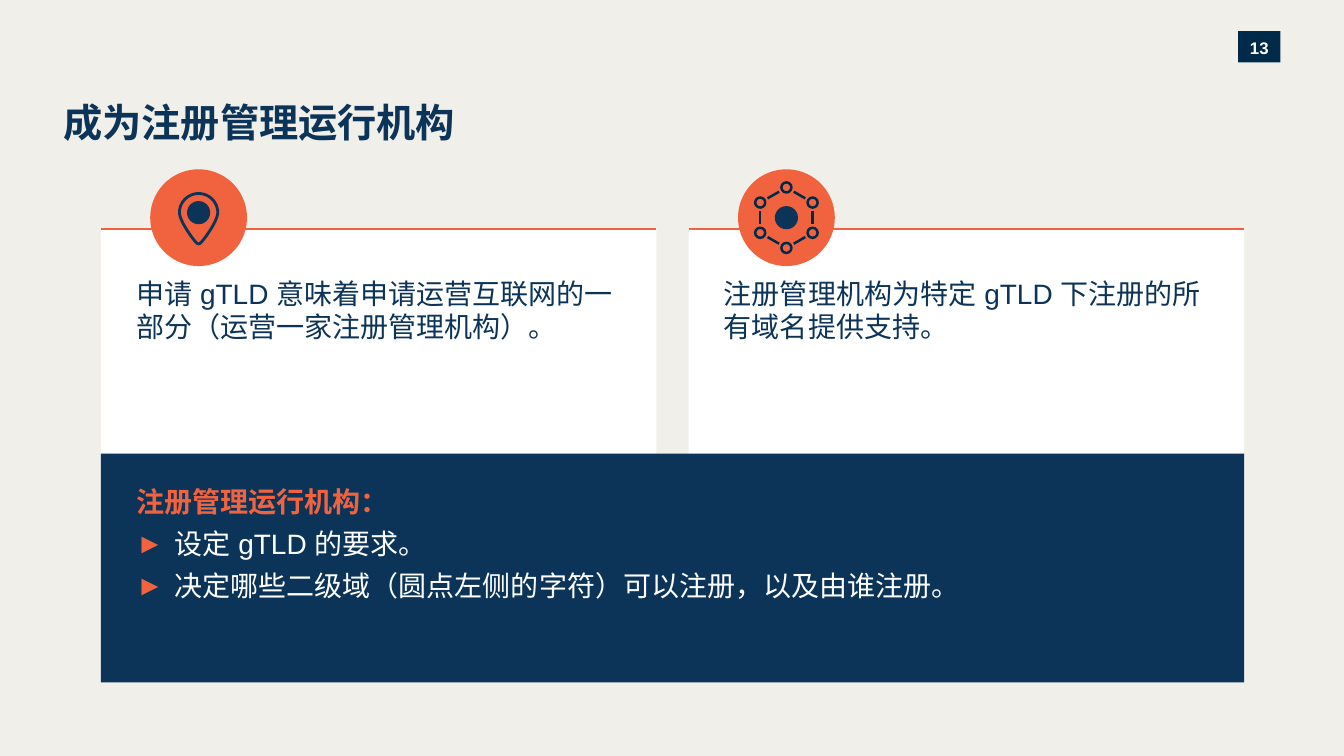
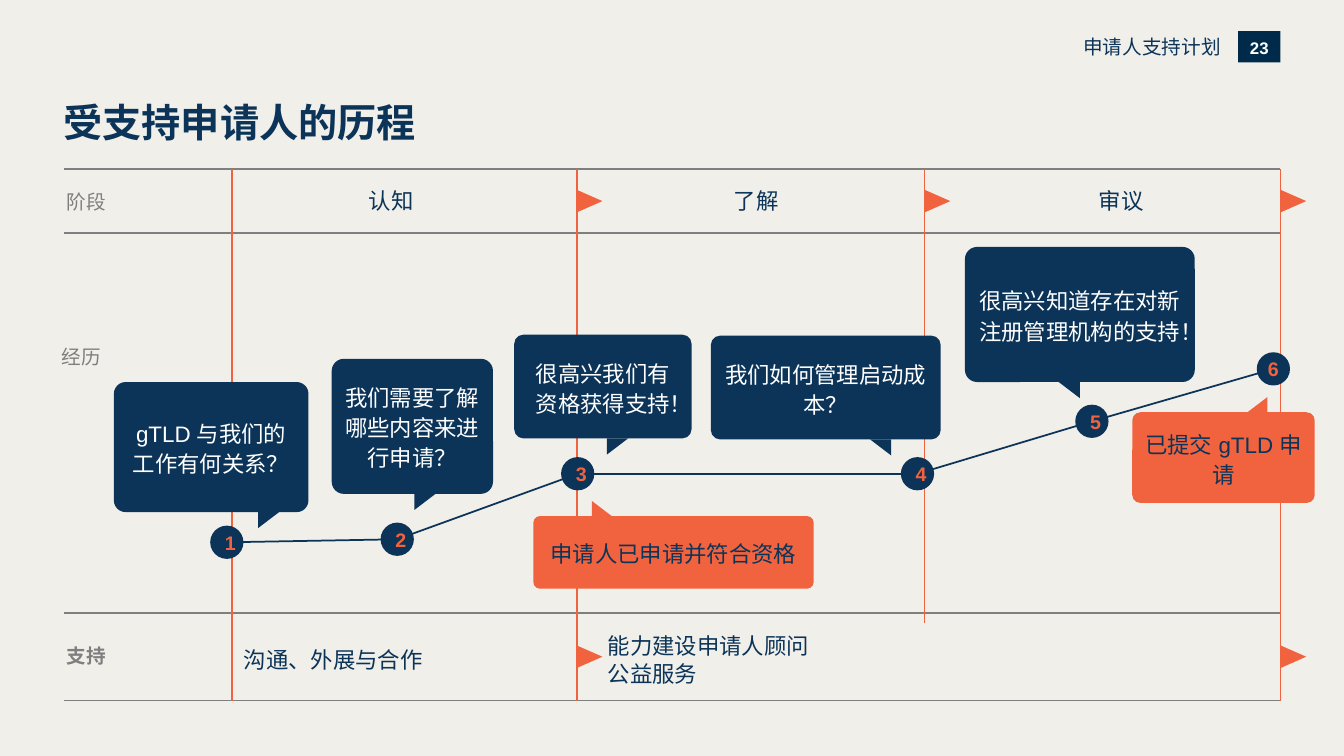
import math
from collections import namedtuple

from lxml import etree
from pptx import Presentation
from pptx import util as u
from pptx.dml.color import RGBColor
from pptx.enum import shapes, text
from pptx.oxml.ns import qn

NAVY, INK, ORANGE = "0B3458", "002A49", "F1633E"
PAPER, WHITE, GREY = "F1EFEA", "FFFFFF", "7F7F7F"
FONT = "Arial"
KIND = shapes.MSO_SHAPE
LEFT, CENTER, RIGHT = text.PP_ALIGN.LEFT, text.PP_ALIGN.CENTER, text.PP_ALIGN.RIGHT
TOP, MIDDLE = text.MSO_ANCHOR.TOP, text.MSO_ANCHOR.MIDDLE
NO_INSET = (0, 0, 0, 0)


class Box(namedtuple("Box", "x y w h")):
    """An area on a grid of one-inch columns and rows."""

    def inner(self, x, y, w, h):
        return Box(self.x + x, self.y + y, w, h)

    def inches(self):
        return [u.Inches(side) for side in self]


SLIDE = Box(0, 0, 13.33, 7.5)


# Shared drawing helpers
def color(value):
    return RGBColor.from_string(value)


def write(shape, words, size, ink, bold=False, align=LEFT, anchor=TOP,
          inset=NO_INSET, spacing=None):
    frame = shape.text_frame
    frame.word_wrap = True
    frame.vertical_anchor = anchor
    frame.margin_left, frame.margin_top, frame.margin_right, frame.margin_bottom = (
        u.Inches(side) for side in inset)
    frame.text = words
    for para in frame.paragraphs:
        para.alignment = align
        if spacing:
            para.line_spacing = spacing
        for span in para.runs:
            style(span, size, ink, bold)
    return frame


def style(span, size, ink, bold):
    font = span.font
    font.name, font.size, font.bold = FONT, u.Pt(size), bold
    font.color.rgb = color(ink)
    props = font._element
    props.set("lang", "zh-CN")
    etree.SubElement(props, qn("a:ea")).set("typeface", FONT)


def label(page, box, words, size, ink, **options):
    area = page.shapes.add_textbox(*box.inches())
    write(area, words, size, ink, **options)


def paint(shape, fill=None, outline=None, width=0):
    shape.shadow.inherit = False
    if fill:
        shape.fill.solid()
        shape.fill.fore_color.rgb = color(fill)
    else:
        shape.fill.background()
    if outline:
        shape.line.color.rgb = color(outline)
        shape.line.width = u.Pt(width)
    else:
        shape.line.fill.background()
    return shape


def block(page, box, fill=None, kind=KIND.RECTANGLE, outline=None, width=0):
    return paint(page.shapes.add_shape(kind, *box.inches()), fill, outline, width)


def rule(page, start, end, ink, width=1.25):
    line = page.shapes.add_connector(
        shapes.MSO_CONNECTOR.STRAIGHT, *(u.Inches(v) for v in (*start, *end)))
    line.line.color.rgb = color(ink)
    line.line.width = u.Pt(width)
    etree.SubElement(line._element.spPr, qn("a:effectLst"))


def disc(page, center, diameter, fill=None, **outline):
    x, y = center
    box = Box(x - diameter / 2, y - diameter / 2, diameter, diameter)
    return block(page, box, fill, KIND.OVAL, **outline)


def new_page(deck, title, number, section=None):
    page = deck.slides.add_slide(deck.slide_layouts[6])
    page.background.fill.solid()
    page.background.fill.fore_color.rgb = color(PAPER)
    badge = block(page, SLIDE.inner(12.28, 0.31, 0.42, 0.31), INK)
    write(badge, number, 12, WHITE, bold=True, align=CENTER, anchor=MIDDLE, spacing=1.08)
    label(page, SLIDE.inner(0.63, 0.98, 8.5, 0.52), title, 28, NAVY, bold=True)
    if section:
        label(page, SLIDE.inner(7.28, 0.35, 4.83, 0.24), section, 14, NAVY, align=RIGHT)
    return page


# Icons, each drawn around the middle of its disc
def bezier(start, first, second, end, steps=12):
    for step in range(1, steps + 1):
        t = step / steps
        weights = ((1 - t) ** 3, 3 * t * (1 - t) ** 2, 3 * t * t * (1 - t), t ** 3)
        yield tuple(sum(k * p[axis] for k, p in zip(weights, (start, first, second, end)))
                    for axis in (0, 1))


def pin_icon(page, center):
    x, y = center
    # Right half from the top down to the tip; the left half mirrors it
    curves = [((0, -0.24), (0.1, -0.24), (0.19, -0.16), (0.19, -0.05)),
              ((0.19, -0.05), (0.19, 0.02), (0.09, 0.17), (0.03, 0.24)),
              ((0.03, 0.24), (0.02, 0.25), (0.01, 0.26), (0, 0.26))]
    half = [point for curve in curves for point in bezier(*curve)]
    outline = [(0, -0.24)] + half + [(-dx, dy) for dx, dy in reversed(half[:-1])]
    points = [(u.Inches(x + dx), u.Inches(y + dy)) for dx, dy in outline]
    builder = page.shapes.build_freeform(*points[0])
    builder.add_line_segments(points[1:], close=True)
    paint(builder.convert_to_shape(), outline=NAVY, width=2)
    disc(page, (x, y - 0.05), 0.23, NAVY)


def network_icon(page, center):
    x, y = center
    nodes = [(x + 0.3 * math.sin(turn * math.pi / 3), y - 0.3 * math.cos(turn * math.pi / 3))
             for turn in range(6)]
    for index, (x1, y1) in enumerate(nodes):
        x2, y2 = nodes[(index + 1) % 6]
        start, end = ((x1 + (x2 - x1) * t, y1 + (y2 - y1) * t) for t in (0.28, 0.72))
        rule(page, start, end, INK, 1.75)
        disc(page, (x1, y1), 0.1, outline=INK, width=1.75)
    disc(page, center, 0.23, NAVY)


# Registry slide
def card(page, box, words, icon):
    write(block(page, box, WHITE), words, 20, NAVY, inset=(0.35, 0.47, 0.39, 0.3))
    rule(page, (box.x, box.y), (box.x + box.w, box.y), ORANGE)
    center = (box.x + 0.97, box.y - 0.11)
    disc(page, center, 0.96, ORANGE)
    icon(page, center)


def bullet(para):
    props = para._p.get_or_add_pPr()
    props.set("marL", str(u.Inches(0.38)))
    props.set("indent", str(-u.Inches(0.38)))
    tint = etree.SubElement(props, qn("a:buClr"))
    etree.SubElement(tint, qn("a:srgbClr")).set("val", ORANGE)
    etree.SubElement(props, qn("a:buFont")).set("typeface", FONT)
    etree.SubElement(props, qn("a:buChar")).set("char", "►")
    para.space_before = u.Pt(6)


def duties_panel(page, box, heading, duties):
    frame = write(block(page, box, NAVY), heading, 20, ORANGE, bold=True,
                  inset=(0.35, 0.31, 0.47, 0.3))
    for duty in duties:
        para = frame.add_paragraph()
        para.text = duty
        para.alignment = LEFT
        bullet(para)
        style(para.runs[0], 20, WHITE, False)


def registry_slide(deck):
    page = new_page(deck, "成为注册管理运行机构", "13")
    area = SLIDE.inner(1, 2.27, 11.34, 4.5)
    gap = 0.32
    width = (area.w - gap) / 2
    cards = [("申请 gTLD 意味着申请运营互联网的一部分（运营一家注册管理机构）。", pin_icon),
             ("注册管理机构为特定 gTLD 下注册的所有域名提供支持。", network_icon)]
    for index, (words, icon) in enumerate(cards):
        card(page, area.inner(index * (width + gap), 0, width, 2.23), words, icon)
    duties_panel(page, area.inner(0, 2.23, area.w, 2.27), "注册管理运行机构：",
                 ["设定 gTLD 的要求。",
                  "决定哪些二级域（圆点左侧的字符）可以注册，以及由谁注册。"])


# Journey slide: column and row edges inside the journey box
COLUMNS = (1.67, 5.09, 8.54, 12.07)
ROWS = (0, 0.63, 4.4, 5.27)
STEPS = ((1.62, 3.7), (3.31, 3.67), (5.1, 3.02), (8.47, 3.02), (10.2, 2.5), (12, 1.98))

# Words, place in the journey box, tail offset, side of the tail's upright edge
QUESTIONS = [
    ("gTLD 与我们的工作有何关系？", (0.5, 2.11, 1.93, 1.29), 1.43, LEFT),
    ("我们需要了解哪些内容来进行申请？", (2.66, 1.88, 1.6, 1.34), 0.82, LEFT),
    ("很高兴我们有资格获得支持！", (4.47, 1.64, 1.76, 1.03), 0.92, LEFT),
    ("我们如何管理启动成本？", (6.42, 1.65, 2.28, 1.03), 1.58, RIGHT),
    ("很高兴知道存在对新注册管理机构的支持！", (8.94, 0.77, 2.28, 1.34), 0.93, RIGHT),
]
MILESTONES = [
    ("申请人已申请并符合资格", (4.66, 3.44, 2.78, 0.72), 0.58, LEFT),
    ("已提交 gTLD 申请", (10.6, 2.41, 1.81, 0.9), 1.13, RIGHT),
]


def flow_arrow(page, box, x, y):
    arrow = block(page, box.inner(x + 0.02, y, 0.22, 0.25), ORANGE, KIND.ISOSCELES_TRIANGLE)
    arrow.rotation = 90


def journey_grid(page, box):
    for row in ROWS:
        rule(page, (box.x, box.y + row), (box.x + box.w, box.y + row), GREY)
    for index, column in enumerate(COLUMNS):
        bottom = 4.5 if index == 2 else box.h
        rule(page, (box.x + column, box.y), (box.x + column, box.y + bottom), ORANGE)
    for column in COLUMNS[1:]:
        flow_arrow(page, box, column, 0.19)
    for column in COLUMNS[1::2]:
        flow_arrow(page, box, column, 4.71)


def journey_labels(page, box):
    rows = [("阶段", 0.03, 0.2, False), ("经历", -0.02, 1.74, False), ("支持", 0.03, 4.71, True)]
    for words, x, y, bold in rows:
        label(page, box.inner(x, y, 1.6, 0.24), words, 14, GREY, bold=bold)
    for index, words in enumerate(("认知", "了解", "审议")):
        label(page, box.inner(1.64 + 3.62 * index, 0.07, 3.22, 0.46), words, 16, NAVY,
              align=CENTER, anchor=MIDDLE, spacing=1.06)
    support = [("沟通、外展与合作", 1.63, 3.46, 0.16),
               ("能力建设申请人顾问\v公益服务", 5.09, 6.97, 0.31)]
    for words, x, width, indent in support:
        label(page, box.inner(x, 4.47, width, 0.77), words, 16, NAVY,
              anchor=MIDDLE, inset=(indent, 0, 0, 0), spacing=1.06)


def bubble(page, box, words, fill, ink, tail_x, side, above):
    body = block(page, box, fill, KIND.ROUNDED_RECTANGLE)
    body.adjustments[0] = 0.09
    write(body, words, 16, ink, align=CENTER, anchor=MIDDLE, inset=(0.08,) * 4, spacing=1.12)
    tail_y = -0.15 if above else box.h
    tail = block(page, box.inner(tail_x, tail_y, 0.21, 0.16), fill, KIND.RIGHT_TRIANGLE)
    frame = tail._element.spPr.find(qn("a:xfrm"))
    if side == RIGHT:
        frame.set("flipH", "1")
    if not above:
        frame.set("flipV", "1")


def journey_path(page, box):
    centers = [(box.x + x, box.y + y) for x, y in STEPS]
    for start, end in zip(centers, centers[1:]):
        rule(page, start, end, NAVY)
    for number, center in enumerate(centers, 1):
        inset = NO_INSET if number == len(centers) else (0.1, 0.05, 0.1, 0.05)
        write(disc(page, center, 0.33, NAVY), str(number), 14, ORANGE, bold=True,
              align=CENTER, anchor=MIDDLE, inset=inset)


def journey_slide(deck):
    page = new_page(deck, "受支持申请人的历程", "23", "申请人支持计划")
    box = SLIDE.inner(0.63, 1.68, COLUMNS[-1], ROWS[-1])
    journey_grid(page, box)
    journey_labels(page, box)
    journey_path(page, box)
    for group, fill, ink, above in ((QUESTIONS, NAVY, WHITE, False),
                                    (MILESTONES, ORANGE, NAVY, True)):
        for words, place, tail_x, side in group:
            bubble(page, box.inner(*place), words, fill, ink, tail_x, side, above)


def main():
    deck = Presentation()
    deck.slide_width, deck.slide_height = u.Inches(SLIDE.w), u.Inches(SLIDE.h)
    registry_slide(deck)
    journey_slide(deck)
    deck.save("out.pptx")


if __name__ == "__main__":
    main()
